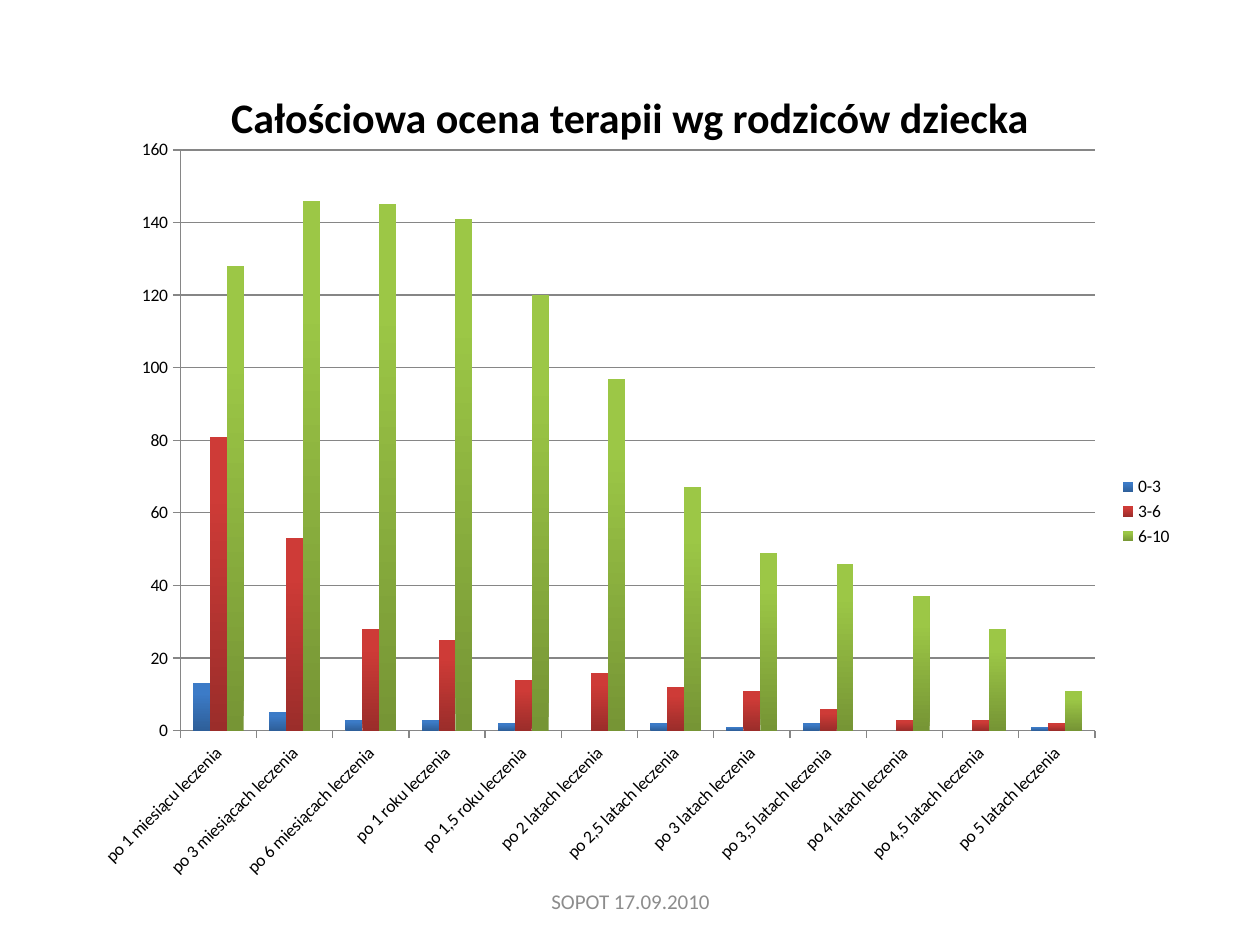
from dataclasses import dataclass

from lxml import etree
from pptx import Presentation
from pptx.chart.data import CategoryChartData
from pptx.dml.color import RGBColor
from pptx.enum.chart import XL_CHART_TYPE, XL_LEGEND_POSITION, XL_TICK_MARK
from pptx.enum.text import MSO_ANCHOR, PP_ALIGN
from pptx.oxml.ns import qn
from pptx.util import Inches, Pt

CLUSTERED = XL_CHART_TYPE.COLUMN_CLUSTERED
LEGEND_RIGHT = XL_LEGEND_POSITION.RIGHT
TICK_OUTSIDE = XL_TICK_MARK.OUTSIDE
CENTER = PP_ALIGN.CENTER
MIDDLE = MSO_ANCHOR.MIDDLE
FONT = "Calibri"
COLORS = {
    "text": "000000",
    "footer": "8C8C8C",
    "line": "868686",
    "blue_dark": "2E5F99",
    "blue_light": "3C7BC7",
    "red_dark": "9B2D2A",
    "red_light": "CE3B37",
    "green_dark": "769535",
    "green_light": "9CC746",
}


@dataclass
class Rating:
    name: str
    values: list
    hue: str


@dataclass
class Box:
    left: float
    top: float
    width: float
    height: float

    def lengths(self) -> list:
        return [Inches(v) for v in (self.left, self.top, self.width, self.height)]


PERIODS = [
    "1 miesiącu", "3 miesiącach", "6 miesiącach", "1 roku", "1,5 roku", "2 latach",
    "2,5 latach", "3 latach", "3,5 latach", "4 latach", "4,5 latach", "5 latach",
]
RATINGS = [
    Rating("0-3", [13, 5, 3, 3, 2, None, 2, 1, 2, None, None, 1], "blue"),
    Rating("3-6", [81, 53, 28, 25, 14, 16, 12, 11, 6, 3, 3, 2], "red"),
    Rating("6-10", [128, 146, 145, 141, 120, 97, 67, 49, 46, 37, 28, 11], "green"),
]
TITLE_BOX = Box(0.5, 0.3, 9, 1.25)
CHART_BOX = Box(0.59, 0.99, 8.82, 6.14)
PLOT_BOX = Box(1.43, 1.19, 7.26, 4.61)
FOOTER_BOX = Box(3.42, 6.95, 3.17, 0.4)


def color(name: str) -> RGBColor:
    return RGBColor.from_string(COLORS[name])


def write_text(shape, text: str, size: float, color_name: str, bold: bool) -> None:
    frame = shape.text_frame
    frame.word_wrap = True
    frame.vertical_anchor = MIDDLE
    paragraph = frame.paragraphs[0]
    paragraph.alignment = CENTER
    run = paragraph.add_run()
    run.text = text
    run.font.name = FONT
    run.font.size = Pt(size)
    run.font.bold = bold
    run.font.color.rgb = color(color_name)


def place_plot(chart, plot: Box, frame: Box) -> None:
    plot_area = chart.plots[0]._element.getparent()
    for old in plot_area.findall(qn("c:layout")):
        plot_area.remove(old)
    layout = etree.Element(qn("c:layout"))
    plot_area.insert(0, layout)
    manual = etree.SubElement(layout, qn("c:manualLayout"))
    settings = {
        "layoutTarget": "inner",
        "xMode": "edge",
        "yMode": "edge",
        "x": (plot.left - frame.left) / frame.width,
        "y": (plot.top - frame.top) / frame.height,
        "w": plot.width / frame.width,
        "h": plot.height / frame.height,
    }
    for tag, value in settings.items():
        etree.SubElement(manual, qn(f"c:{tag}")).set("val", str(value))


def style_axis(axis) -> None:
    axis.major_tick_mark = TICK_OUTSIDE
    axis.format.line.color.rgb = color("line")
    axis.format.line.width = Pt(0.75)
    axis.tick_labels.font.size = Pt(10)


def fill_columns(series, hue: str) -> None:
    fill = series.format.fill
    fill.gradient()
    fill.gradient_angle = 90
    for stop, shade, position in zip(fill.gradient_stops, ("dark", "light"), (0, 0.8)):
        stop.color.rgb = color(f"{hue}_{shade}")
        stop.position = position
    series.invert_if_negative = False


def add_rating_chart(slide) -> None:
    data = CategoryChartData()
    data.categories = [f"po {period} leczenia" for period in PERIODS]
    for rating in RATINGS:
        data.add_series(rating.name, rating.values)
    chart = slide.shapes.add_chart(CLUSTERED, *CHART_BOX.lengths(), data).chart
    chart.has_title = False
    chart.font.name = FONT
    chart.font.size = Pt(10)
    chart.font.color.rgb = color("text")
    chart.has_legend = True
    chart.legend.position = LEGEND_RIGHT
    chart.legend.include_in_layout = False

    plot = chart.plots[0]
    plot.gap_width = 150
    plot.overlap = 0
    plot.vary_by_categories = False
    for series, rating in zip(plot.series, RATINGS):
        fill_columns(series, rating.hue)

    value_axis, category_axis = chart.value_axis, chart.category_axis
    style_axis(value_axis)
    style_axis(category_axis)
    value_axis.minimum_scale = 0
    value_axis.maximum_scale = 160
    value_axis.major_unit = 20
    value_axis.has_major_gridlines = True
    gridline = value_axis.major_gridlines.format.line
    gridline.color.rgb = color("line")
    gridline.width = Pt(0.75)
    label_body = category_axis._element.find(qn("c:txPr")).find(qn("a:bodyPr"))
    label_body.set("rot", "-2700000")
    label_body.set("vert", "horz")
    place_plot(chart, PLOT_BOX, CHART_BOX)


def main() -> None:
    presentation = Presentation()
    presentation.slide_width = Inches(10)
    presentation.slide_height = Inches(7.5)
    slide = presentation.slides.add_slide(presentation.slide_layouts[5])

    title = slide.shapes.title
    title.left, title.top, title.width, title.height = TITLE_BOX.lengths()
    write_text(title, "Całościowa ocena terapii wg rodziców dziecka", 24, "text", True)

    add_rating_chart(slide)

    footer = slide.shapes.add_textbox(*FOOTER_BOX.lengths())
    write_text(footer, "SOPOT 17.09.2010", 12, "footer", False)
    presentation.save("out.pptx")


if __name__ == "__main__":
    main()
